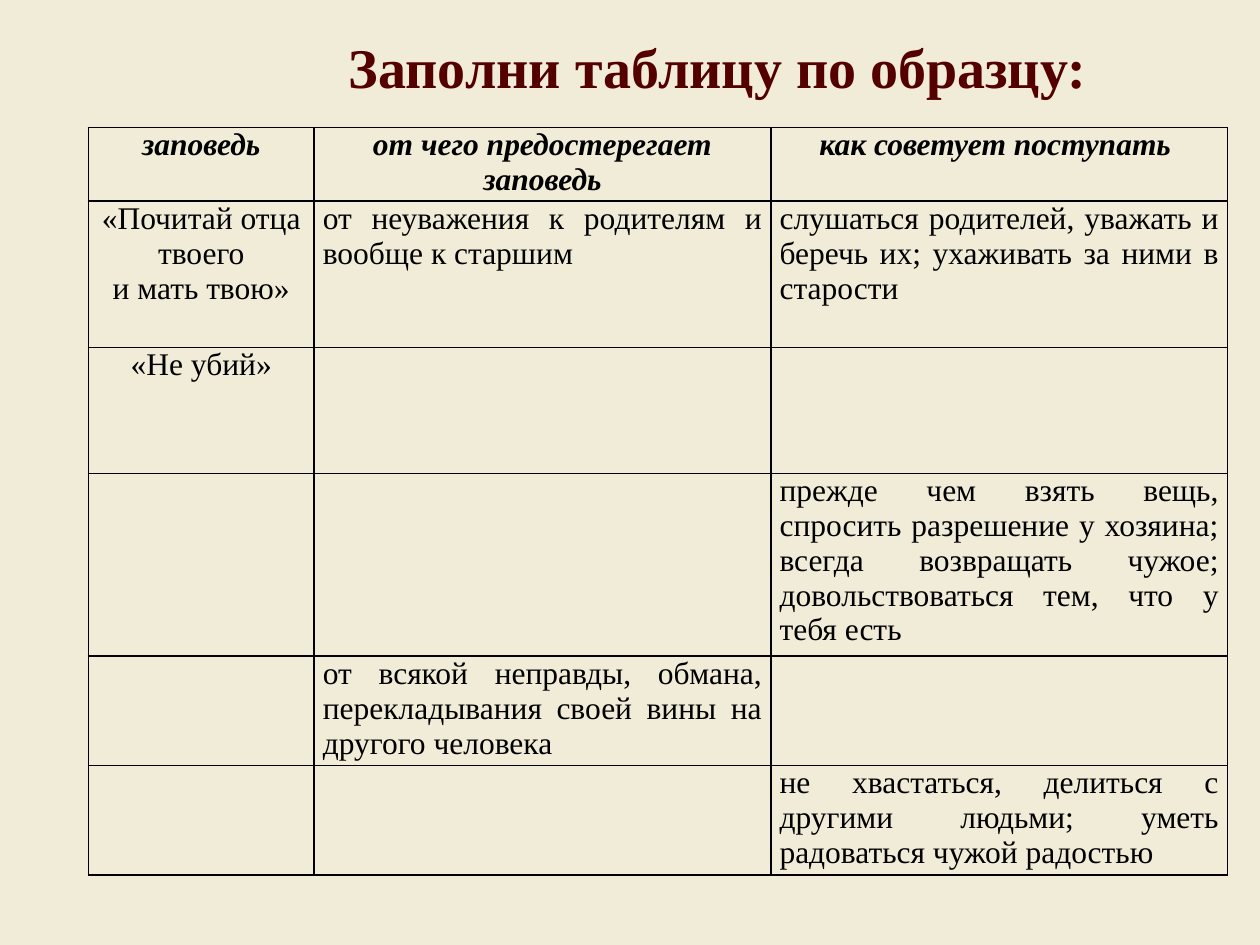
from typing import NamedTuple

from lxml.etree import SubElement
from pptx import Presentation
from pptx.dml.color import RGBColor
from pptx.enum.text import MSO_ANCHOR as Anchor, MSO_AUTO_SIZE as AutoSize, PP_ALIGN as Align
from pptx.oxml.ns import qn
from pptx.util import Pt

CREAM = RGBColor(0xF1, 0xEC, 0xD8)
MAROON = RGBColor(0x54, 0x00, 0x00)
BLACK = RGBColor(0x00, 0x00, 0x00)
FONT = "Times New Roman"

COLUMN_WIDTHS = (129, 261, 261)


class Row(NamedTuple):
    height: float
    commandment: str = ""
    warning: str = ""
    advice: str = ""


ROWS = (
    Row(42, "заповедь", "от чего предостерегает заповедь", "как советует поступать "),
    Row(83.5, "«Почитай отца твоего\nи мать твою»",
        "от неуважения к родителям и вообще к старшим",
        "слушаться родителей, уважать и беречь их; ухаживать за ними в старости"),
    Row(72, "«Не убий»"),
    Row(104.5, advice="прежде чем взять вещь, спросить разрешение у хозяина; всегда "
                      "возвращать чужое; довольствоваться тем, что у тебя есть"),
    Row(62.5, warning="от всякой неправды, обмана, перекладывания своей вины "
                      "на другого человека "),
    Row(62.5, advice="не хвастаться, делиться с другими людьми; уметь радоваться "
                     "чужой радостью"),
)


def write(frame, text: str, *, size: float = 18, color: RGBColor = BLACK,
          bold: bool = False, italic: bool = False, align=Align.CENTER) -> None:
    """Fill a text frame, one paragraph for each line of text."""
    frame.text = text
    for paragraph in frame.paragraphs:
        paragraph.alignment = align
        for run in paragraph.runs:
            font = run.font
            font.name, font.size, font.color.rgb = FONT, Pt(size), color
            font.bold, font.italic = bold, italic


def draw_borders(cell, color: RGBColor = BLACK, width: float = 1) -> None:
    properties = cell._tc.get_or_add_tcPr()
    for side in ("lnL", "lnR", "lnT", "lnB"):
        line = SubElement(properties, qn(f"a:{side}"), w=str(Pt(width)))
        fill = SubElement(line, qn("a:solidFill"))
        SubElement(fill, qn("a:srgbClr"), val=str(color))


def add_title(slide, text: str) -> None:
    title = slide.shapes.title
    title.left, title.top, title.width, title.height = Pt(174), Pt(11.5), Pt(472.5), Pt(104.5)
    frame = title.text_frame
    frame.auto_size = AutoSize.NONE
    frame.word_wrap = True
    frame.vertical_anchor = Anchor.TOP
    frame.margin_top = Pt(7)
    write(frame, text, size=32, color=MAROON, bold=True)


def add_commandments(slide) -> None:
    table = slide.shapes.add_table(
        len(ROWS), len(COLUMN_WIDTHS), Pt(50.5), Pt(73),
        Pt(sum(COLUMN_WIDTHS)), Pt(sum(row.height for row in ROWS))).table
    table.first_row = table.horz_banding = False
    for column, width in zip(table.columns, COLUMN_WIDTHS):
        column.width = Pt(width)
    for r, row in enumerate(ROWS):
        table.rows[r].height = Pt(row.height)
        for c, text in enumerate(row[1:]):
            cell = table.cell(r, c)
            draw_borders(cell)
            cell.fill.background()
            cell.margin_left = cell.margin_right = Pt(5)
            cell.margin_top = cell.margin_bottom = Pt(0)
            header = r == 0
            write(cell.text_frame, text, bold=header, italic=header,
                  align=Align.CENTER if header or c == 0 else Align.JUSTIFY)


def main() -> None:
    deck = Presentation()
    deck.slide_width, deck.slide_height = Pt(720), Pt(540)
    slide = deck.slides.add_slide(deck.slide_layouts[5])  # title only
    background = slide.background.fill
    background.solid()
    background.fore_color.rgb = CREAM

    add_title(slide, "Заполни таблицу по образцу:")
    add_commandments(slide)
    deck.save("out.pptx")


if __name__ == "__main__":
    main()
